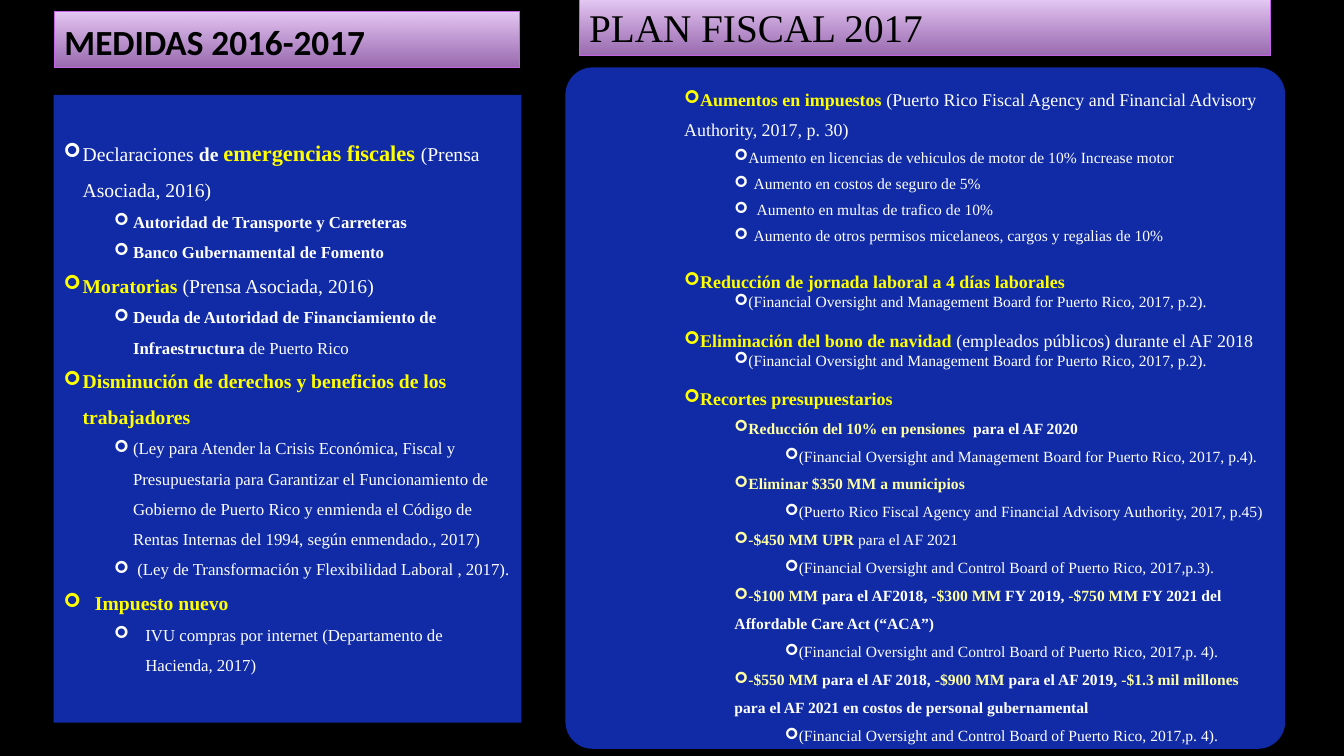
from dataclasses import dataclass
from typing import NamedTuple

from lxml.etree import SubElement
from pptx import Presentation
from pptx.dml.color import RGBColor
from pptx.enum.shapes import MSO_SHAPE
from pptx.enum.text import MSO_ANCHOR, MSO_AUTO_SIZE, PP_ALIGN
from pptx.oxml.ns import qn
from pptx.util import Cm, Pt


@dataclass(frozen=True)
class Theme:
    back: str = "000000"
    ink: str = "000000"
    panel: str = "102BA5"
    light: str = "E7CAF5"
    deep: str = "CF91EC"
    edge: str = "C363E8"
    white: str = "FFFFFF"
    gold: str = "FFFF00"
    pale: str = "FFFFA3"
    serif: str = "Times New Roman"
    sans: str = "Calibri"
    left: tuple = (14, 12)
    right: tuple = (0, 0, 12.8, 11.1, 11.1)
    big: float = 16
    step: float = 1.27
    hang: float = 0.48


THEME = Theme()


class Span(NamedTuple):
    text: str
    color: str = THEME.white
    bold: bool = False
    size: float = 0


class Item(NamedTuple):
    level: int
    spans: list[Span]
    hang: float = 0
    lines: float = 1.5
    gap: float = 0


class Box(NamedTuple):
    x: float
    y: float
    w: float
    h: float


def plain(text: str) -> Span:
    return Span(text)


def bold(text: str) -> Span:
    return Span(text, bold=True)


def gold(text: str, size: float = 0) -> Span:
    return Span(text, THEME.gold, True, size)


def pale(text: str) -> Span:
    return Span(text, THEME.pale, True)


def tint(code: str) -> RGBColor:
    return RGBColor.from_string(code)


def place(shape, box: Box) -> None:
    shape.left, shape.top, shape.width, shape.height = map(Cm, box)


def write(para, span: Span, size: float, face: str) -> None:
    run = para.add_run()
    run.text = span.text
    font = run.font
    font.name, font.size, font.bold = face, Pt(span.size or size), span.bold
    font.color.rgb = tint(span.color)


def set_frame(shape, anchor: MSO_ANCHOR):
    frame = shape.text_frame
    frame.word_wrap = True
    frame.auto_size = MSO_AUTO_SIZE.NONE
    frame.vertical_anchor = anchor
    return frame


def draw_head(shape, box: Box, span: Span, face: str) -> None:
    """Format a lilac heading bar."""
    place(shape, box)
    shape.shadow.inherit = False
    shape.fill.gradient()
    shape.fill.gradient_angle = 270
    for stop, code in zip(shape.fill.gradient_stops, (THEME.light, THEME.deep)):
        stop.color.rgb = tint(code)
    last = shape._element.xpath(".//a:gs[2]/a:srgbClr")[0]
    SubElement(last, qn("a:alpha")).set("val", "74000")
    shape.line.color.rgb = tint(THEME.edge)
    shape.line.width = Pt(0.75)
    para = set_frame(shape, MSO_ANCHOR.BOTTOM).paragraphs[0]
    para.alignment = PP_ALIGN.LEFT
    write(para, span, span.size, face)


def add_item(para, item: Item, sizes: tuple) -> None:
    para.level = item.level
    para.alignment = PP_ALIGN.LEFT
    para.line_spacing = item.lines
    para.space_before, para.space_after = Pt(item.gap), Pt(0)
    props = para._p.get_or_add_pPr()
    props.set("marL", str(Cm(THEME.step * item.level + item.hang)))
    props.set("indent", str(-Cm(item.hang)))
    SubElement(props, qn("a:buFont")).set("typeface", "Wingdings")
    SubElement(props, qn("a:buChar")).set("char", "➢")
    for span in item.spans:
        write(para, span, sizes[item.level], THEME.serif)


def draw_list(shape, box: Box, items: list[Item], sizes: tuple, anchor: MSO_ANCHOR):
    """Format a blue panel and fill it with a bulleted list."""
    place(shape, box)
    shape.shadow.inherit = False
    shape.fill.solid()
    shape.fill.fore_color.rgb = tint(THEME.panel)
    shape.line.fill.background()
    frame = set_frame(shape, anchor)
    for index, item in enumerate(items):
        para = frame.add_paragraph() if index else frame.paragraphs[0]
        add_item(para, item, sizes)
    return frame


HANG = THEME.hang
WIDE = 0.79
BOARD = "(Financial Oversight and Management Board for Puerto Rico, 2017, p."
CONTROL = "(Financial Oversight and Control Board of Puerto Rico, 2017,p."

STEPS = [
    Item(0, [plain("Declaraciones "), bold("de "),
             gold("emergencias fiscales ", THEME.big),
             plain("(Prensa Asociada, 2016)")], HANG),
    Item(1, [bold("Autoridad de Transporte y Carreteras")], HANG),
    Item(1, [bold("Banco Gubernamental de Fomento")], HANG),
    Item(0, [gold("Moratorias "), plain("(Prensa Asociada, 2016)")], HANG),
    Item(1, [bold("Deuda de Autoridad de Financiamiento de Infraestructura"),
             plain(" de Puerto Rico")], HANG),
    Item(0, [gold("Disminución de derechos y beneficios de los trabajadores")], HANG),
    Item(1, [plain("(Ley para Atender la Crisis Económica, Fiscal y Presupuestaria "
                   "para Garantizar el Funcionamiento de Gobierno de Puerto Rico y "
                   "enmienda el Código de Rentas Internas del 1994, según "
                   "enmendado., 2017)")], HANG),
    Item(1, [plain(" (Ley de Transformación y Flexibilidad Laboral , 2017).")], HANG),
    Item(0, [gold("Impuesto nuevo")], WIDE),
    Item(1, [plain("IVU compras por internet (Departamento de Hacienda, 2017)")], WIDE),
]

PLAN = [
    Item(2, [gold("Aumentos en impuestos "),
             plain("(Puerto Rico Fiscal Agency and Financial Advisory Authority, "
                   "2017, p. 30)")], lines=1.4),
    Item(3, [plain("Aumento en licencias de vehiculos de motor de 10% "
                   "Increase motor")], lines=1.4),
    Item(3, [plain("Aumento en costos de seguro de 5%")], HANG, 1.4),
    Item(3, [plain(" Aumento en multas de trafico de 10%")], HANG, 1.4),
    Item(3, [plain("Aumento de otros permisos micelaneos, cargos y regalias "
                   "de 10%")], HANG, 1.4),
    Item(2, [gold("Reducción de jornada laboral a 4 días laborales")], lines=1, gap=18.5),
    Item(3, [plain(BOARD + "2).")], lines=1),
    Item(2, [gold("Eliminación del bono de navidad "),
             plain("(empleados públicos) durante el AF 2018")], lines=1, gap=13),
    Item(3, [plain(BOARD + "2).")], lines=1),
    Item(2, [gold("Recortes presupuestarios")], lines=1, gap=13),
    Item(3, [pale("Reducción del 10% en pensiones "), bold(" para el AF 2020")]),
    Item(4, [plain(BOARD + "4).")]),
    Item(3, [pale("Eliminar $350 MM a municipios")]),
    Item(4, [plain("(Puerto Rico Fiscal Agency and Financial Advisory Authority, "
                   "2017, p.45)")]),
    Item(3, [pale("-$450 MM UPR "), plain("para el AF 2021")]),
    Item(4, [plain(CONTROL + "3).")]),
    Item(3, [pale("-$100 MM"), bold(" para el AF2018, "), pale("-$300 MM "),
             bold("FY 2019, "), pale("-$750 MM "),
             bold("FY 2021 del Affordable Care Act (“ACA”)")]),
    Item(4, [plain(CONTROL + " 4).")]),
    Item(3, [pale("-$550 MM "), bold("para el AF 2018, "), pale("-$900 MM "),
             bold("para el AF 2019, "), pale("-$1.3 mil millones "),
             bold("para el AF 2021 en costos de personal gubernamental")]),
    Item(4, [plain(CONTROL + " 4).")]),
]


def main() -> None:
    deck = Presentation()
    deck.slide_width, deck.slide_height = Cm(33.87), Cm(19.05)
    slide = deck.slides.add_slide(deck.slide_layouts[1])
    slide.background.fill.solid()
    slide.background.fill.fore_color.rgb = tint(THEME.back)
    shapes = slide.shapes

    draw_head(shapes.title, Box(1.37, 0.3, 11.73, 1.4),
              Span("MEDIDAS 2016-2017", THEME.ink, True, 25.2), THEME.sans)
    frame = draw_list(slide.placeholders[1], Box(1.35, 2.39, 11.79, 15.82),
                      STEPS, THEME.left, MSO_ANCHOR.MIDDLE)
    frame.margin_bottom = Cm(0.55)

    area = Box(14.6, 0, 17.42, 1.4)
    head = shapes.add_shape(MSO_SHAPE.RECTANGLE, *map(Cm, area))
    draw_head(head, area, Span("PLAN FISCAL 2017", THEME.ink, False, 28), THEME.serif)
    area = Box(14.25, 1.7, 18.14, 17.17)
    panel = shapes.add_shape(MSO_SHAPE.ROUNDED_RECTANGLE, *map(Cm, area))
    panel.adjustments[0] = 0.04
    draw_list(panel, area, PLAN, THEME.right, MSO_ANCHOR.TOP)
    deck.save("out.pptx")


if __name__ == "__main__":
    main()
